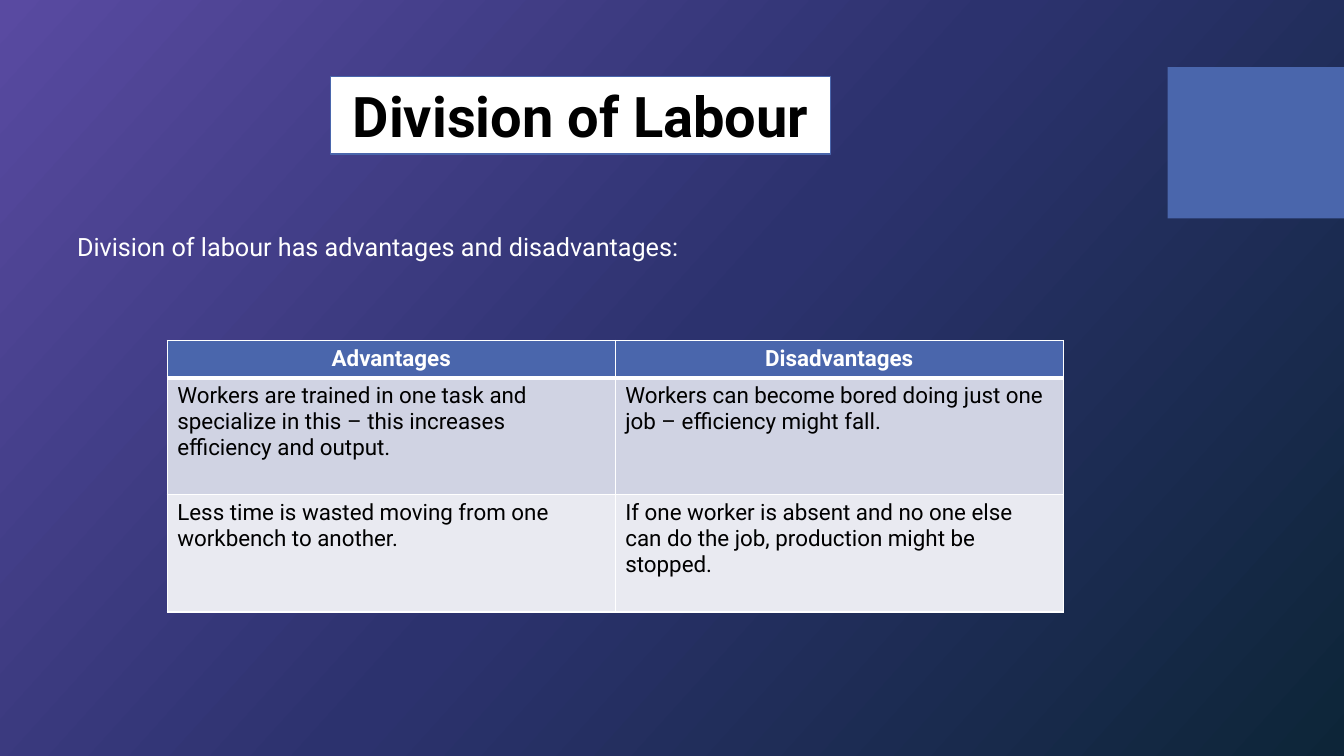
from pptx import Presentation
from pptx.dml.color import RGBColor
from pptx.enum.shapes import MSO_SHAPE
from pptx.enum.text import MSO_ANCHOR, MSO_AUTO_SIZE, PP_ALIGN
from pptx.oxml import parse_xml
from pptx.oxml.ns import nsdecls
from pptx.util import Pt

RECT = MSO_SHAPE.RECTANGLE
MIDDLE = MSO_ANCHOR.MIDDLE
FIXED = MSO_AUTO_SIZE.NONE
LEFT, CENTER = PP_ALIGN.LEFT, PP_ALIGN.CENTER

TITLE = "Division of Labour"
INTRO = "Division of labour has advantages and disadvantages:"
ROWS = [
    ("Advantages", "Disadvantages"),
    ("Workers are trained in one task and specialize in this – this increases efficiency and output.",
     "Workers can become bored doing just one job – efficiency might fall."),
    ("Less time is wasted moving from one workbench to another.",
     "If one worker is absent and no one else can do the job, production might be stopped."),
]

THEME = {
    "font": "Roboto",
    "title": 40, "intro": 18, "cell": 16,
    "accent": "4A66AC", "white": "FFFFFF", "black": "000000",
    "bands": ("D0D3E3", "E9EAF1"),
    "back": ((0, "594AA1"), (50, "2C326E"), (100, "0D2538")), "angle": 42,
}

SIZE = (960, 540)
TITLE_BOX = (236.2, 54.7, 357, 55.4)
ACCENT_BOX = (834, 48, 126, 108)
INTRO_BOX = (48, 162, 446.4, 29.1)
TABLE_AT = (119.5, 243.2)
COL_WIDTH = 320
HEAD_HEIGHT, ROW_HEIGHT = 26.6, 83.7
THIN, THICK = 1, 3


def pts(box):
    return [Pt(n) for n in box]


def color(name):
    return RGBColor.from_string(THEME.get(name, name))


def write(frame, text, size, ink, align=LEFT, bold=False):
    frame.text = text
    para = frame.paragraphs[0]
    para.alignment = align
    font = para.runs[0].font
    font.name, font.size, font.bold = THEME["font"], Pt(THEME[size]), bold
    font.color.rgb = color(ink)


def paint(fill, name):
    fill.solid()
    fill.fore_color.rgb = color(name)


def shade(slide):
    """Give the slide its three-stop gradient background."""
    stops = "".join(
        f'<a:gs pos="{pos * 1000}"><a:srgbClr val="{tint}"/></a:gs>'
        for pos, tint in THEME["back"])
    back = parse_xml(
        f'<p:bg {nsdecls("p", "a")}><p:bgPr><a:gradFill rotWithShape="1">'
        f'<a:gsLst>{stops}</a:gsLst><a:lin ang="{THEME["angle"] * 60000}" scaled="0"/>'
        '</a:gradFill><a:effectLst/></p:bgPr></p:bg>')
    slide.element.cSld.insert(0, back)


def rule(cell, row):
    """Draw white cell borders, thicker between the header and the body."""
    widths = {"L": THIN, "R": THIN,
              "T": THICK if row == 1 else THIN,
              "B": THICK if row == 0 else THIN}
    props = cell._tc.get_or_add_tcPr()
    for side, width in widths.items():
        props.append(parse_xml(
            f'<a:ln{side} {nsdecls("a")} w="{Pt(width)}"><a:solidFill>'
            f'<a:srgbClr val="{THEME["white"]}"/></a:solidFill></a:ln{side}>'))


def add_title(slide):
    title = slide.shapes.title
    title.left, title.top, title.width, title.height = pts(TITLE_BOX)
    paint(title.fill, "white")
    title.line.color.rgb = color("accent")
    title.line.width = Pt(THIN)
    frame = title.text_frame
    frame.auto_size, frame.vertical_anchor = FIXED, MIDDLE
    write(frame, TITLE, "title", "black", CENTER, True)


def add_accent(slide):
    block = slide.shapes.add_shape(RECT, *pts(ACCENT_BOX))
    block.shadow.inherit = False
    paint(block.fill, "accent")
    block.line.fill.background()


def add_intro(slide):
    frame = slide.shapes.add_textbox(*pts(INTRO_BOX)).text_frame
    frame.word_wrap = True
    write(frame, INTRO, "intro", "white")


def add_grid(slide):
    heights = [HEAD_HEIGHT] + [ROW_HEIGHT] * (len(ROWS) - 1)
    cols = len(ROWS[0])
    area = (*TABLE_AT, COL_WIDTH * cols, sum(heights))
    table = slide.shapes.add_table(len(ROWS), cols, *pts(area)).table
    table.horz_banding = False
    for col in table.columns:
        col.width = Pt(COL_WIDTH)
    for r, (texts, height) in enumerate(zip(ROWS, heights)):
        table.rows[r].height = Pt(height)
        head = r == 0
        tint = "accent" if head else THEME["bands"][(r - 1) % 2]
        ink, align = ("white", CENTER) if head else ("black", LEFT)
        for c, text in enumerate(texts):
            cell = table.cell(r, c)
            rule(cell, r)
            paint(cell.fill, tint)
            write(cell.text_frame, text, "cell", ink, align, head)


def main():
    deck = Presentation()
    deck.slide_width, deck.slide_height = pts(SIZE)
    slide = deck.slides.add_slide(deck.slide_layouts[5])
    shade(slide)
    add_accent(slide)
    add_title(slide)
    add_intro(slide)
    add_grid(slide)
    deck.save("out.pptx")


if __name__ == "__main__":
    main()
